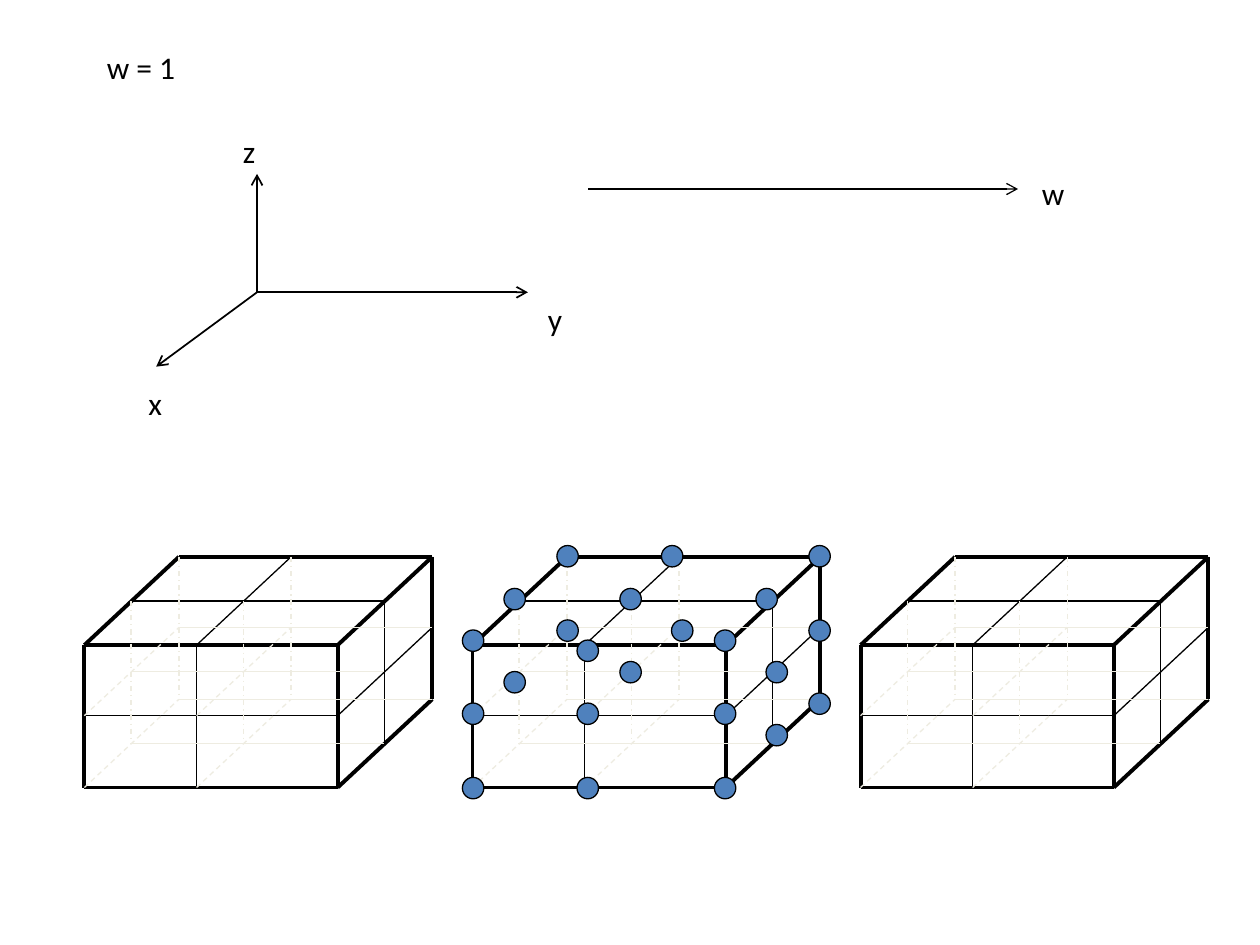
from dataclasses import dataclass
from itertools import product
from typing import NamedTuple

from lxml.etree import SubElement
from pptx import Presentation
from pptx.dml.color import RGBColor
from pptx.enum.dml import MSO_LINE
from pptx.enum.shapes import MSO_CONNECTOR, MSO_SHAPE
from pptx.enum.text import MSO_AUTO_SIZE
from pptx.oxml.ns import qn
from pptx.util import Inches, Pt

BLACK, PALE, BLUE = "000000", "EEECE1", "4F81BD"


class Point(NamedTuple):
    x: float
    y: float


@dataclass
class Stroke:
    color: str = BLACK
    width: float = 0.75
    dash: MSO_LINE | None = None
    arrow: bool = False


@dataclass
class Label:
    text: str
    left: float
    top: float
    width: float


# Every cuboid is a 3 x 3 x 3 lattice indexed by column, row and layer.
COLUMN_X = (0, 0.89, 2.01)
ROW_Y = (0, 0.56, 1.13)
LAYER_X = (0, 0.37, 0.75)
LAYER_Y = (0, 0.35, 0.7)
CUBOID_TOP = 5.12
CUBOID_LEFTS = (0.67, 3.75, 6.83)
VISIBLE_FACES = (2, 0, 0)  # right column, top row, front layer
HIDDEN_DASHES = (None, MSO_LINE.DASH_DOT, MSO_LINE.DASH)

ORIGIN = Point(2.04, 2.32)
ARROWS = [
    (ORIGIN, Point(2.04, 1.38), 1),
    (ORIGIN, Point(1.24, 2.91), 1),
    (ORIGIN, Point(4.19, 2.32), 1),
    (Point(4.67, 1.5), Point(8.08, 1.5), 0.75),
]
LABELS = [
    Label("w", 8.17, 1.33, 0.5),
    Label("x", 1.08, 3, 0.5),
    Label("y", 4.25, 2.33, 0.33),
    Label("z", 1.83, 1, 0.33),
    Label("w = 1", 0.75, 0.33, 1.83),
]

DOT_SIZE = 0.17
DOT_ROWS = {  # top of each row: left edges of its dots
    4.33: (4.42, 5.25, 6.42),
    4.67: (4, 4.92, 6),
    4.92: (4.42, 5.33, 6.42),
    5: (3.67, 5.67),
    5.08: (4.58,),
    5.25: (4.92, 6.08),
    5.33: (4,),
    5.5: (6.42,),
    5.58: (3.67, 4.58, 5.67),
    5.75: (6.08,),
    6.17: (3.67, 4.58, 5.67),
}


def rgb(color: str) -> RGBColor:
    return RGBColor.from_string(color)


def draw_line(shapes, start: Point, end: Point, stroke: Stroke) -> None:
    ends = [Inches(value) for value in (*start, *end)]
    connector = shapes.add_connector(MSO_CONNECTOR.STRAIGHT, *ends)
    line = connector.line
    line.color.rgb = rgb(stroke.color)
    formats = {"width": Pt(stroke.width), "dash_style": stroke.dash}
    for name, value in formats.items():
        setattr(line, name, value)
    if stroke.arrow:
        SubElement(line._get_or_add_ln(), qn("a:tailEnd"), type="arrow")
    SubElement(connector._element.spPr, qn("a:effectLst"))


def lattice_point(left: float, node: tuple[int, int, int]) -> Point:
    column, row, layer = node
    return Point(left + COLUMN_X[column] + LAYER_X[layer],
                 CUBOID_TOP + ROW_Y[row] - LAYER_Y[layer])


def lattice_lines():
    """Yield start node, end node and stroke: visible lines first, hidden ones on top."""
    hidden = []
    for axis, fixed in product(range(3), product(range(3), repeat=2)):
        start = (*fixed[:axis], 0, *fixed[axis:])
        end = (*fixed[:axis], 2, *fixed[axis:])
        on_face = any(start[other] == VISIBLE_FACES[other]
                      for other in range(3) if other != axis)
        if on_face:
            yield start, end, Stroke(width=0.75 if 1 in fixed else 2.25)
        else:
            width = 0.25 if start == (0, 1, 2) and axis == 0 else 0.75
            hidden.append((start, end, Stroke(PALE, width, HIDDEN_DASHES[axis])))
    yield from hidden


def draw_cuboid(page, left: float) -> None:
    group = page.shapes.add_group_shape()
    for start, end, stroke in lattice_lines():
        draw_line(group.shapes, lattice_point(left, start), lattice_point(left, end), stroke)


def draw_label(page, label: Label) -> None:
    box = page.shapes.add_textbox(Inches(label.left), Inches(label.top),
                                  Inches(label.width), Inches(0.4))
    frame = box.text_frame
    frame.word_wrap = True
    frame.auto_size = MSO_AUTO_SIZE.SHAPE_TO_FIT_TEXT
    span = frame.paragraphs[0].add_run()
    span.text = label.text
    for name, value in {"name": "Calibri", "size": Pt(18)}.items():
        setattr(span.font, name, value)
    span.font.color.rgb = rgb(BLACK)


def draw_dot(page, left: float, top: float) -> None:
    dot = page.shapes.add_shape(MSO_SHAPE.OVAL, Inches(left), Inches(top),
                                Inches(DOT_SIZE), Inches(DOT_SIZE))
    dot.shadow.inherit = False
    dot.fill.solid()
    dot.fill.fore_color.rgb = rgb(BLUE)
    dot.line.color.rgb = rgb(BLACK)
    dot.line.width = Pt(0.75)


def main() -> None:
    deck = Presentation()
    deck.slide_width, deck.slide_height = Inches(10), Inches(7.5)
    page = deck.slides.add_slide(deck.slide_layouts[6])
    for left in CUBOID_LEFTS:
        draw_cuboid(page, left)
    for start, tip, width in ARROWS:
        draw_line(page.shapes, start, tip, Stroke(width=width, arrow=True))
    for label in LABELS:
        draw_label(page, label)
    for top, lefts in DOT_ROWS.items():
        for left in lefts:
            draw_dot(page, left, top)
    deck.save("out.pptx")


if __name__ == "__main__":
    main()
